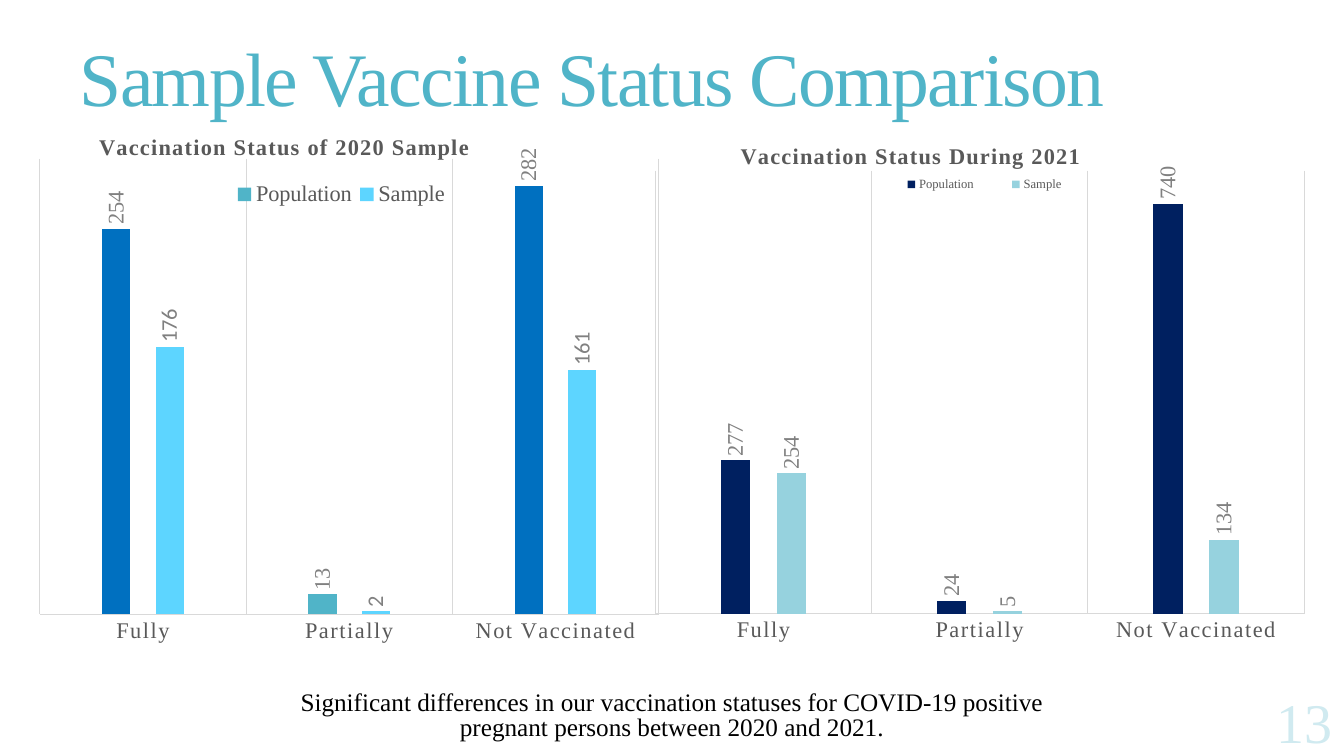
"""Build the slide comparing vaccine status in population and sample."""
from lxml.etree import SubElement
from pptx import Presentation
from pptx.chart.data import CategoryChartData
from pptx.dml.color import RGBColor
from pptx.enum.chart import XL_CHART_TYPE as ChartType, XL_LABEL_POSITION as LabelPosition
from pptx.enum.chart import XL_LEGEND_POSITION as LegendPosition, XL_TICK_MARK as TickMark
from pptx.enum.text import MSO_ANCHOR as Anchor, MSO_AUTO_SIZE as AutoSize, PP_ALIGN as Align
from pptx.oxml.ns import qn
from pptx.util import Inches, Pt

SERIF, SANS = "Times New Roman", "Calibri"
TEAL = RGBColor(0x50, 0xB4, 0xC8)
PALE_TEAL = RGBColor(0x96, 0xD2, 0xDE)
FAINT_TEAL = RGBColor(0xD0, 0xEA, 0xF0)
SKY = RGBColor(0x5D, 0xD5, 0xFF)
BLUE = RGBColor(0x00, 0x70, 0xC0)
NAVY = RGBColor(0x00, 0x20, 0x60)
DARK_GRAY = RGBColor(0x59, 0x59, 0x59)
GRAY = RGBColor(0x80, 0x80, 0x80)
RULE_GRAY = RGBColor(0xD9, 0xD9, 0xD9)
BLACK = RGBColor(0, 0, 0)

HEADLINE = "Sample Vaccine Status Comparison"
FINDING = ("Significant differences in our vaccination statuses for COVID-19 positive "
           "pregnant persons between 2020 and 2021.")
PAGE = "13"
STATUSES = ["Fully", "Partially", "Not Vaccinated"]
YEARS = [
    {"title": "Vaccination Status of 2020 Sample", "box": (0.12, 1.17, 6.53, 5.62),
     "top": 300, "legend_size": 16,
     "title_at": (0.126, 0.02), "legend_at": (0.33, 0.1, 0.34, 0.07),
     "plot_at": (0.042, 0.072, 0.94, 0.804),
     "series": [("Population", (254, 13, 282), (BLUE, TEAL, BLUE), TEAL, SERIF),
                ("Sample", (176, 2, 161), (), SKY, SANS)]},
    {"title": "Vaccination Status During 2021", "box": (6.32, 1.28, 6.89, 5.23),
     "top": 800, "legend_size": 9,
     "title_at": (0.143, 0.017), "legend_at": (0.34, 0.08, 0.32, 0.05),
     "plot_at": (0.026, 0.079, 0.934, 0.841),
     "series": [("Population", (277, 24, 740), (), NAVY, SERIF),
                ("Sample", (254, 5, 134), (), PALE_TEAL, SERIF)]},
]


def set_font(font, size, color, name=SERIF, bold=False):
    """Apply size, colour, typeface and weight to a font."""
    font.size, font.name, font.bold = Pt(size), name, bold
    font.color.rgb = color


def write(frame, text, size, color, align=Align.LEFT, anchor=Anchor.TOP,
          bold=False, leading=None, spacing=0, margin=0.1):
    """Write one formatted paragraph without a bullet into a text frame."""
    frame.word_wrap, frame.auto_size, frame.vertical_anchor = True, AutoSize.NONE, anchor
    frame.margin_left = frame.margin_right = Inches(margin)
    frame.margin_top = frame.margin_bottom = Inches(0.05)
    paragraph = frame.paragraphs[0]
    properties = paragraph._p.get_or_add_pPr()
    properties.set("marL", "0")
    properties.set("indent", "0")
    SubElement(properties, qn("a:buNone"))
    paragraph.alignment, paragraph.line_spacing = align, leading
    paragraph.space_before = Pt(0)
    run = paragraph.add_run()
    run.text = text
    set_font(run.font, size, color, bold=bold)
    run.font._element.set("spc", str(spacing)) if hasattr(run.font, "_element") else \
        run._r.get_or_add_rPr().set("spc", str(spacing))


def place(slide_part, box):
    """Move a shape to a left, top, width, height box in inches."""
    slide_part.left, slide_part.top, slide_part.width, slide_part.height = map(Inches, box)


def set_layout(holder, index, fractions, inner=False):
    """Fix a chart part at fractions of the chart area."""
    for old in holder.findall(qn("c:layout")):
        holder.remove(old)
    layout = SubElement(holder, qn("c:layout"))
    holder.insert(index, layout)
    manual = SubElement(layout, qn("c:manualLayout"))
    settings = [("layoutTarget", "inner")] if inner else []
    settings += [("xMode", "edge"), ("yMode", "edge")]
    settings += zip("xywh", fractions)
    for tag, value in settings:
        SubElement(manual, qn(f"c:{tag}")).set("val", str(value))


def add_year_chart(slide, year):
    """Add the column chart of one year."""
    data = CategoryChartData()
    data.categories = STATUSES
    for name, values, *_ in year["series"]:
        data.add_series(name, values)
    chart = slide.shapes.add_chart(
        ChartType.COLUMN_CLUSTERED, *map(Inches, year["box"]), data).chart
    set_font(chart.font, 10, BLACK, SANS)

    chart.has_title = True
    title_run = chart.chart_title.text_frame.paragraphs[0].add_run()
    title_run.text = year["title"]
    set_font(title_run.font, 16, DARK_GRAY, bold=True)
    title_run._r.get_or_add_rPr().set("spc", "100")
    chart.has_legend = True
    chart.legend.position = LegendPosition.TOP
    chart.legend.include_in_layout = False
    set_font(chart.legend.font, year["legend_size"], DARK_GRAY)

    statuses, counts = chart.category_axis, chart.value_axis
    statuses.major_tick_mark = statuses.minor_tick_mark = TickMark.NONE
    statuses.has_major_gridlines = True
    for line in (statuses.format.line, statuses.major_gridlines.format.line):
        line.color.rgb, line.width = RULE_GRAY, Pt(0.75)
    set_font(statuses.tick_labels.font, 16, DARK_GRAY)
    counts.minimum_scale, counts.maximum_scale = 0, year["top"]
    counts.has_major_gridlines = counts.visible = False

    plot = chart.plots[0]
    plot.gap_width, plot.overlap, plot.vary_by_categories = 444, -90, False
    for series, (_, _, point_colors, color, typeface) in zip(plot.series, year["series"]):
        series.format.fill.solid()
        series.format.fill.fore_color.rgb = color
        for position, point_color in enumerate(point_colors):
            fill = series.points[position].format.fill
            fill.solid()
            fill.fore_color.rgb = point_color
        labels = series.data_labels
        labels.show_value, labels.position = True, LabelPosition.OUTSIDE_END
        set_font(labels.font, 16, GRAY, typeface)

    root = chart.element
    for body in root.xpath(".//c:dLbls/c:txPr/a:bodyPr"):
        body.set("rot", "-5400000")
        body.set("vert", "horz")
    for run_default in root.xpath(".//c:catAx/c:txPr//a:defRPr"):
        run_default.set("spc", "120")
    set_layout(root.xpath("./c:chart/c:title")[0], 1, year["title_at"])
    set_layout(root.xpath(".//c:legend")[0], 1, year["legend_at"])
    set_layout(root.xpath(".//c:plotArea")[0], 0, year["plot_at"], inner=True)


def main():
    """Build and save the slide."""
    deck = Presentation()
    deck.slide_width, deck.slide_height = Inches(13.33), Inches(7.5)
    slide = deck.slides.add_slide(deck.slide_layouts[1])
    headline, finding = slide.shapes.title, slide.placeholders[1]
    place(headline, (0.69, 0.26, 11.96, 1.13))
    write(headline.text_frame, HEADLINE, 54, TEAL, anchor=Anchor.MIDDLE,
          leading=0.85, spacing=-120)
    for year in YEARS:
        add_year_chart(slide, year)
    place(finding, (2.43, 6.8, 8.47, 0.7))
    write(finding.text_frame, FINDING, 18, BLACK, align=Align.CENTER, leading=0.85, margin=0.2)
    page = slide.shapes.add_textbox(*map(Inches, (12.3, 6.8, 1.01, 0.7)))
    write(page.text_frame, PAGE, 40, FAINT_TEAL, align=Align.RIGHT, anchor=Anchor.MIDDLE)
    deck.save("out.pptx")


if __name__ == "__main__":
    main()
